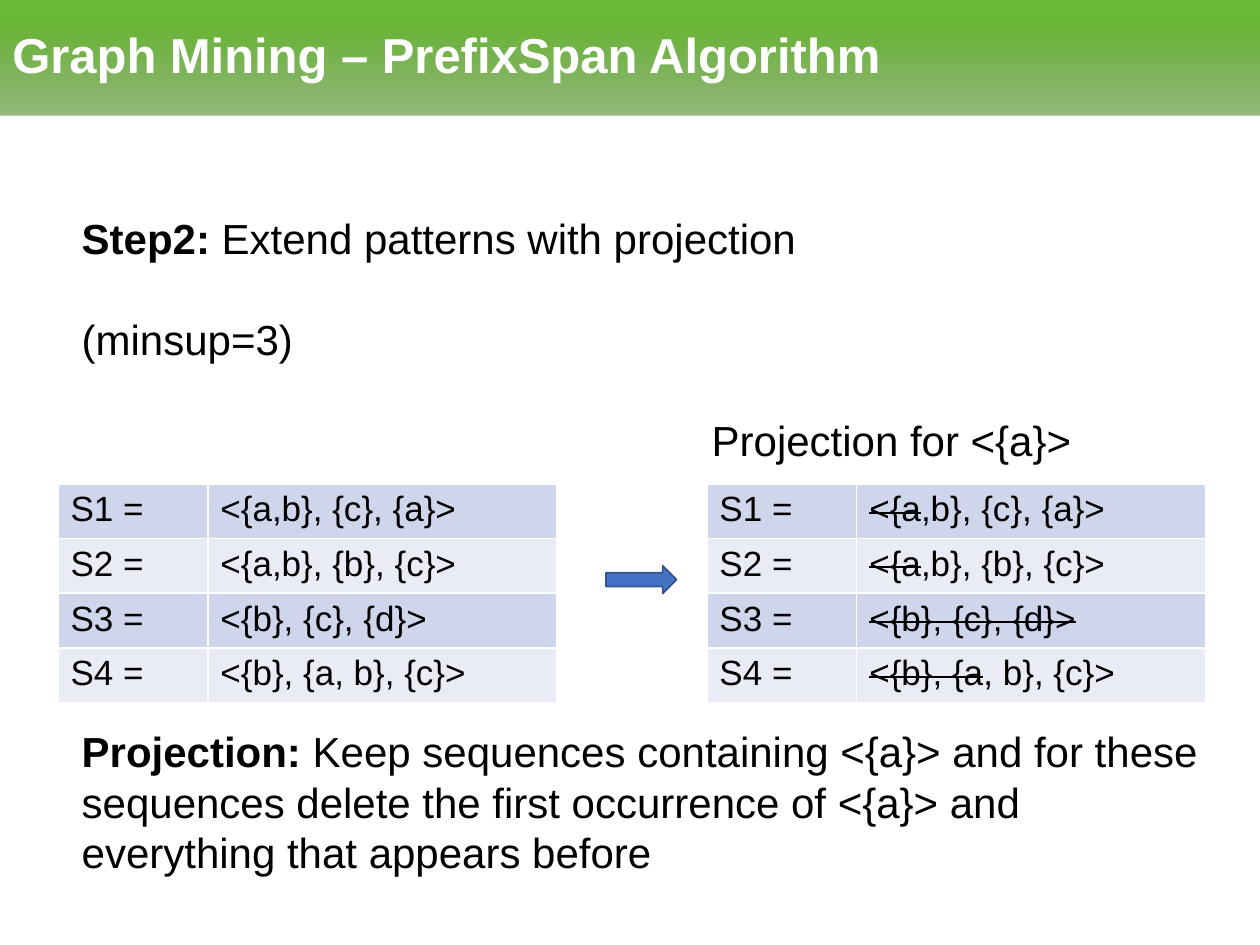
from dataclasses import dataclass

from lxml import etree
from pptx import Presentation
from pptx import util as u
from pptx.dml.color import RGBColor
from pptx.enum import shapes, text
from pptx.oxml import parse_xml
from pptx.oxml.ns import nsdecls, qn

COLORS = {
    "white": "FFFFFF", "black": "000000",
    "band_dark": "CFD5EA", "band_light": "E9EBF5",
    "arrow": "4472C4", "arrow_line": "325491",
    "title_top": "6ABA34", "title_middle": "6AB636", "title_bottom": "518D2A",
}
LINE_HEIGHT = 28.8  # points, one line of 24 pt text


@dataclass
class Run:
    text: str
    bold: bool = False
    strike: bool = False


@dataclass
class Sequence:
    name: str
    removed: str
    kept: str


SEQUENCES = [
    Sequence("S1 =", "<{a", ",b}, {c}, {a}>"),
    Sequence("S2 =", "<{a", ",b}, {b}, {c}>"),
    Sequence("S3 =", "<{b}, {c}, {d}>", ""),
    Sequence("S4 =", "<{b}, {a", ", b}, {c}>"),
]


def color(name: str) -> RGBColor:
    return RGBColor.from_string(COLORS[name])


def write(paragraph, runs: list[Run], size=24, color_name="black",
          space_before=0.0, line_spacing=1.0, indent=0.0) -> None:
    paragraph.alignment = text.PP_ALIGN.LEFT
    paragraph.line_spacing = line_spacing
    if space_before:
        paragraph.space_before = u.Pt(space_before)
    if indent:
        paragraph._p.get_or_add_pPr().set("marL", str(u.Inches(indent)))
    for item in runs:
        run = paragraph.add_run()
        run.text = item.text
        font = run.font
        font.name, font.size, font.bold = "Arial", u.Pt(size), item.bold
        font.color.rgb = color(color_name)
        if item.strike:
            run._r.get_or_add_rPr().set("strike", "sngStrike")


def add_text_box(slide, top: float, height: float):
    box = slide.shapes.add_textbox(
        u.Inches(0.55), u.Inches(top), u.Inches(9.19), u.Inches(height))
    box.text_frame.word_wrap = True
    return box.text_frame


def add_title(slide, title: str) -> None:
    bar = slide.shapes.add_shape(
        shapes.MSO_SHAPE.RECTANGLE, 0, 0, u.Inches(10), u.Inches(0.92))
    bar.shadow.inherit = False
    bar.line.fill.background()
    gradient = parse_xml(
        f'<a:gradFill {nsdecls("a")} rotWithShape="1"><a:gsLst>'
        f'<a:gs pos="0"><a:srgbClr val="{COLORS["title_bottom"]}">'
        '<a:alpha val="60000"/></a:srgbClr></a:gs>'
        f'<a:gs pos="80000"><a:srgbClr val="{COLORS["title_middle"]}"/></a:gs>'
        f'<a:gs pos="100000"><a:srgbClr val="{COLORS["title_top"]}"/></a:gs>'
        '</a:gsLst><a:lin ang="16200000" scaled="0"/></a:gradFill>')
    bar._element.spPr.find(qn("a:prstGeom")).addnext(gradient)
    frame = bar.text_frame
    frame.word_wrap = True
    frame.vertical_anchor = text.MSO_ANCHOR.MIDDLE
    write(frame.paragraphs[0], [Run(title, bold=True)], size=28,
          color_name="white", line_spacing=0.9)


def style_cell(cell, fill_name: str) -> None:
    """Fill the cell and give it thin white borders."""
    cell.fill.solid()
    cell.fill.fore_color.rgb = color(fill_name)
    properties = cell._tc.get_or_add_tcPr()
    for index, side in enumerate(("lnL", "lnR", "lnT", "lnB")):
        border = etree.Element(qn(f"a:{side}"), w=str(u.Pt(1)))
        fill = etree.SubElement(border, qn("a:solidFill"))
        etree.SubElement(fill, qn("a:srgbClr"), val=COLORS["white"])
        properties.insert(index, border)


def add_sequence_table(slide, left: float, projected: bool) -> None:
    """Draw the sequences; a projected table strikes out what is removed."""
    table = slide.shapes.add_table(
        len(SEQUENCES), 2, u.Inches(left), u.Inches(3.84),
        u.Inches(3.96), u.Inches(1.73)).table
    table.first_row = table.horz_banding = False
    for column, width in zip(table.columns, (1.19, 2.77)):
        column.width = u.Inches(width)
    for index, sequence in enumerate(SEQUENCES):
        if projected:
            parts = [Run(sequence.removed, strike=True), Run(sequence.kept)]
        else:
            parts = [Run(sequence.removed + sequence.kept)]
        contents = ([Run(sequence.name)], [part for part in parts if part.text])
        for cell, runs in zip(table.rows[index].cells, contents):
            write(cell.text_frame.paragraphs[0], runs, size=20)
            style_cell(cell, "band_light" if index % 2 else "band_dark")


def add_arrow(slide) -> None:
    arrow = slide.shapes.add_shape(
        shapes.MSO_SHAPE.RIGHT_ARROW, u.Inches(4.81), u.Inches(4.49),
        u.Inches(0.56), u.Inches(0.22))
    arrow.shadow.inherit = False
    arrow.fill.solid()
    arrow.fill.fore_color.rgb = color("arrow")
    arrow.line.color.rgb = color("arrow_line")
    arrow.line.width = u.Pt(1)


def main() -> None:
    presentation = Presentation()
    presentation.slide_width, presentation.slide_height = u.Inches(10), u.Inches(7.5)
    slide = presentation.slides.add_slide(presentation.slide_layouts[6])

    add_title(slide, "Graph Mining – PrefixSpan Algorithm")
    step = add_text_box(slide, 1.64, 2.12)
    write(step.paragraphs[0],
          [Run("Step2: ", bold=True), Run("Extend patterns with projection")])
    write(step.add_paragraph(), [Run("(minsup=3)")], space_before=LINE_HEIGHT)
    write(step.add_paragraph(), [Run("Projection for <{a}>")],
          space_before=LINE_HEIGHT, indent=5)

    add_sequence_table(slide, 0.46, projected=False)
    add_sequence_table(slide, 5.61, projected=True)
    add_arrow(slide)

    explanation = add_text_box(slide, 5.71, 1.31)
    write(explanation.paragraphs[0], [
        Run("Projection: ", bold=True),
        Run("Keep sequences containing <{a}> and for these sequences delete "
            "the first occurrence of <{a}> and everything that appears before"),
    ])
    presentation.save("out.pptx")


if __name__ == "__main__":
    main()
